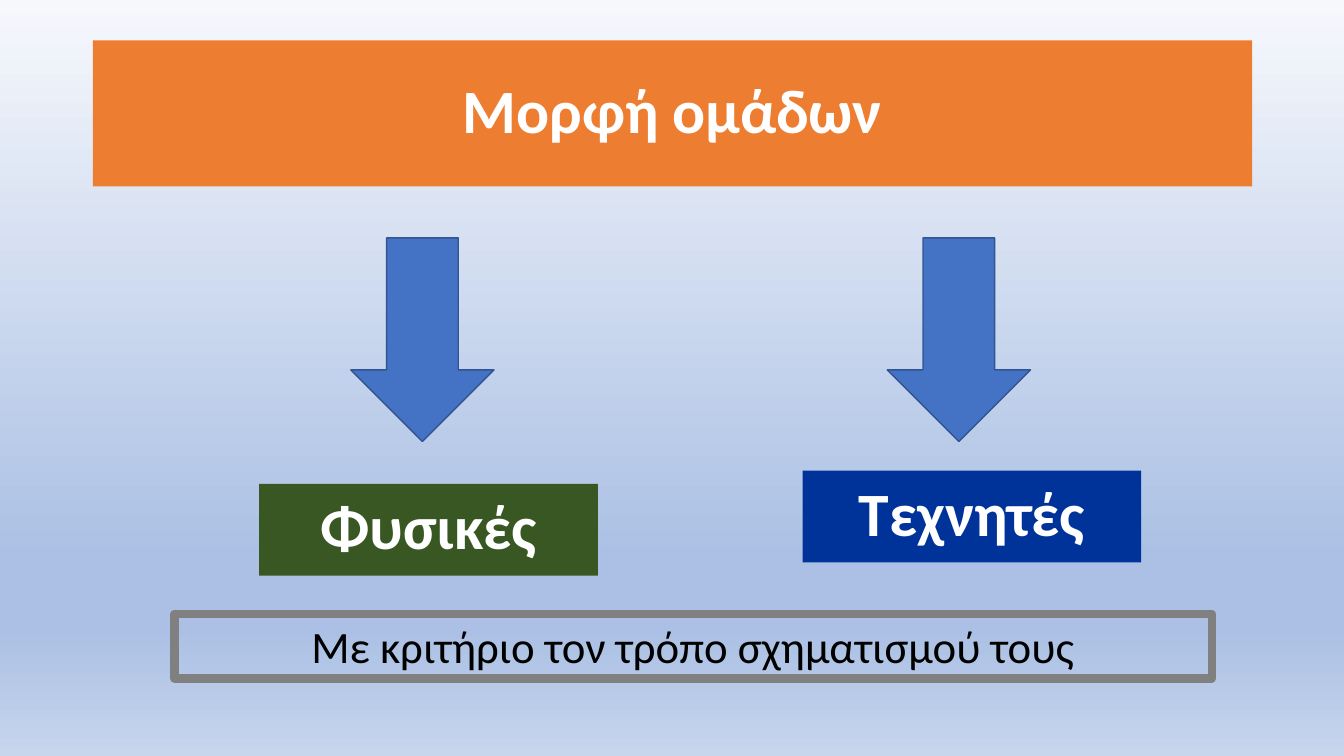
from dataclasses import dataclass

from lxml import etree
from pptx import Presentation
from pptx import util as u
from pptx.dml.color import RGBColor
from pptx.enum import shapes, text
from pptx.oxml import parse_xml
from pptx.oxml.ns import nsdecls, qn

PX = 9144  # EMU per px, 100 px to the inch


@dataclass(frozen=True)
class Theme:
    font: str = "Calibri"
    heading_size: int = 44
    caption_size: int = 32
    white: str = "FFFFFF"
    black: str = "000000"
    orange: str = "ED7D31"
    green: str = "385723"
    navy: str = "003399"
    arrow: str = "4472C4"
    arrow_edge: str = "325491"
    frame: str = "808080"
    backdrop: tuple = ((0, "F6F8FC"), (74, "ABC0E4"), (83, "ABC0E4"), (100, "C7D5ED"))


THEME = Theme()


def px(*lengths):
    return [u.Emu(length * PX) for length in lengths]


def paint(shape, fill=None, line=None, width=1):
    """Set fill and outline; None means neither is drawn."""
    if fill:
        shape.fill.solid()
        shape.fill.fore_color.rgb = RGBColor.from_string(fill)
    else:
        shape.fill.background()
    if line:
        shape.line.color.rgb = RGBColor.from_string(line)
        shape.line.width = u.Pt(width)
    else:
        shape.line.fill.background()


def write(shape, words, size, color, bold=False, spacing=None,
          anchor=text.MSO_ANCHOR.MIDDLE, fit=text.MSO_AUTO_SIZE.NONE):
    frame = shape.text_frame
    frame.word_wrap = True
    frame.auto_size = fit
    frame.vertical_anchor = anchor
    paragraph = frame.paragraphs[0]
    paragraph.alignment = text.PP_ALIGN.CENTER
    paragraph.line_spacing = spacing
    run = paragraph.add_run()
    run.text = words
    run.font.name = THEME.font
    run.font.size = u.Pt(size)
    run.font.bold = bold
    run.font.color.rgb = RGBColor.from_string(color)


def write_heading(shape, words):
    write(shape, words, THEME.heading_size, THEME.white, bold=True, spacing=0.9)


def add_backdrop(slide):
    """Vertical gradient behind the whole slide."""
    fill = slide.background.fill
    fill.gradient()
    gradient = slide.element.find(".//" + qn("a:gradFill"))
    stops = "".join(
        f'<a:gs pos="{percent * 1000}"><a:srgbClr val="{color}"/></a:gs>'
        for percent, color in THEME.backdrop)
    gradient.replace(gradient.find(qn("a:gsLst")),
                     parse_xml(f'<a:gsLst {nsdecls("a")}>{stops}</a:gsLst>'))
    gradient.find(qn("a:lin")).set("ang", str(90 * 60000))


def add_title(slide, words, left, top, width, height):
    title = slide.shapes.title
    title.left, title.top, title.width, title.height = px(left, top, width, height)
    paint(title, THEME.orange)
    write_heading(title, words)


def add_arrow(slide, left, top):
    arrow = slide.shapes.add_shape(
        shapes.MSO_SHAPE.DOWN_ARROW, *px(left, top, 142, 202))
    arrow.shadow.inherit = False
    paint(arrow, THEME.arrow, THEME.arrow_edge)


def add_group_form(slide, words, left, top, fill):
    form = slide.shapes.add_shape(
        shapes.MSO_SHAPE.RECTANGLE, *px(left, top, 336, 91))
    form.shadow.inherit = False
    paint(form, fill)
    write_heading(form, words)


def add_criterion(slide, words, left, top, width, height):
    criterion = slide.shapes.add_textbox(*px(left, top, width, height))
    paint(criterion, line=THEME.frame, width=6)
    etree.SubElement(criterion.line._get_or_add_ln(), qn("a:round"))
    write(criterion, words, THEME.caption_size, THEME.black,
          anchor=text.MSO_ANCHOR.TOP, fit=text.MSO_AUTO_SIZE.SHAPE_TO_FIT_TEXT)


def main():
    deck = Presentation()
    deck.slide_width, deck.slide_height = px(1333, 750)
    slide = deck.slides.add_slide(deck.slide_layouts[5])  # title only
    add_backdrop(slide)
    add_title(slide, "Μορφή ομάδων", 92, 40, 1150, 145)

    # Arrows from the title to the two forms
    for left in (880, 348):
        add_arrow(slide, left, 236)

    # The two forms of group
    add_group_form(slide, "Φυσικές", 257, 480, THEME.green)
    add_group_form(slide, "Τεχνητές", 796, 467, THEME.navy)

    # What tells them apart
    add_criterion(slide, "Με κριτήριο τον τρόπο σχηματισμού τους", 173, 609, 1029, 64)

    deck.save("out.pptx")


if __name__ == "__main__":
    main()
